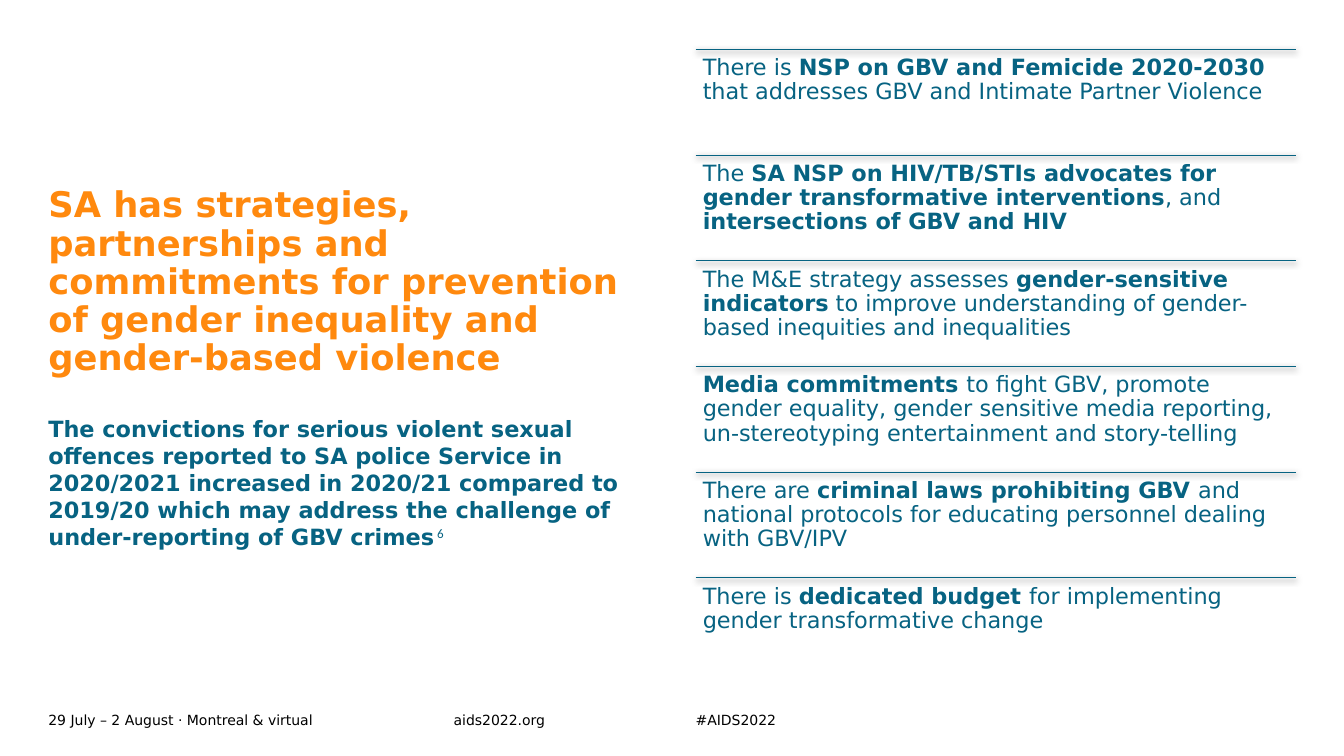
from dataclasses import dataclass

from lxml.etree import SubElement
from pptx import Presentation
from pptx.dml.color import RGBColor
from pptx.enum.shapes import MSO_CONNECTOR as Connector
from pptx.enum.text import MSO_ANCHOR as Anchor, MSO_AUTO_SIZE as AutoSize, PP_ALIGN as Align
from pptx.oxml.ns import qn
from pptx.util import Inches, Pt


@dataclass(frozen=True)
class Theme:
    font: str = "DejaVu Sans"
    note_font: str = "Calibri"
    teal: str = "076382"
    orange: str = "FF890E"
    black: str = "000000"
    title_size: float = 25.2
    body_size: float = 16
    footer_size: float = 10


THEME = Theme()

TITLE = ("SA has strategies, partnerships and commitments for prevention "
         "of gender inequality and gender-based violence")
CONVICTIONS = ("The convictions for serious violent sexual offences reported to SA police "
               "Service in 2020/2021 increased in 2020/21 compared to 2019/20 which may "
               "address the challenge of under-reporting of GBV crimes")
COMMITMENTS = [
    [("There is ", False), ("NSP on GBV and Femicide 2020-2030 ", True),
     ("that addresses GBV and Intimate Partner Violence", False)],
    [("The ", False),
     ("SA NSP on HIV/TB/STIs advocates for gender transformative interventions", True),
     (", and ", False), ("intersections of GBV and HIV", True)],
    [("The M&E strategy assesses ", False), ("gender-sensitive indicators", True),
     (" to improve understanding of gender-based inequities and inequalities", False)],
    [("Media commitments ", True),
     ("to fight GBV, promote gender equality, gender sensitive media reporting, "
      "un-stereotyping entertainment and story-telling", False)],
    [("There are ", False), ("criminal laws prohibiting GBV ", True),
     ("and national protocols for educating personnel dealing with GBV/IPV", False)],
    [("There is ", False), ("dedicated budget ", True),
     ("for implementing gender transformative change", False)],
]
FOOTER = [
    ("29 July – 2 August · Montreal & virtual", 0, 4.02),
    ("aids2022.org", 4.02, 1.93),
    ("#AIDS2022", 6.42, 1.93),
]


def write_text(box, spans, size=THEME.body_size, color=THEME.teal,
               anchor=Anchor.TOP, inset=0, line_spacing=1.0):
    frame = box.text_frame
    frame.word_wrap = True
    frame.auto_size = AutoSize.NONE
    frame.vertical_anchor = anchor
    frame.margin_left = frame.margin_right = Inches(inset)
    frame.margin_top = frame.margin_bottom = Inches(inset)
    para = frame.paragraphs[0]
    para.alignment = Align.LEFT
    para.line_spacing = line_spacing
    for text, bold in spans:
        span = para.add_run()
        span.text = text
        span.font.name = THEME.font
        span.font.size = Pt(size)
        span.font.bold = bold
        span.font.color.rgb = RGBColor.from_string(color)
    return para


def add_text(page, left, top, width, height, spans, **style):
    box = page.shapes.add_textbox(Inches(left), Inches(top), Inches(width), Inches(height))
    return write_text(box, spans, **style)


def add_rule(page, left, top, width):
    rule = page.shapes.add_connector(
        Connector.STRAIGHT, Inches(left), Inches(top), Inches(left + width), Inches(top))
    rule.line.color.rgb = RGBColor.from_string(THEME.teal)
    rule.line.width = Pt(0.5)
    effects = SubElement(rule._element.spPr, qn("a:effectLst"))
    shadow = SubElement(effects, qn("a:outerShdw"), blurRad=str(Pt(4.5)), dist=str(Pt(1.5)),
                        dir="5400000", algn="ctr", rotWithShape="0")
    shade = SubElement(shadow, qn("a:srgbClr"), val=THEME.black)
    SubElement(shade, qn("a:alpha"), val="63000")


def add_message(page, left, top, width):
    title = page.shapes.title
    title.left, title.top = Inches(left), Inches(top)
    title.width, title.height = Inches(width), Inches(1.93)
    write_text(title, [(TITLE, True)], size=THEME.title_size, color=THEME.orange,
               anchor=Anchor.BOTTOM, line_spacing=0.9)
    para = add_text(page, left, top + 2.3, width, 1.68, [(CONVICTIONS, True), (" 6", False)])
    reference = para.runs[-1]
    reference.font.name = THEME.note_font
    reference.font._element.set("baseline", "30000")


def add_commitments(page, left, top, width, height):
    row_height = height / len(COMMITMENTS)
    for index, spans in enumerate(COMMITMENTS):
        row_top = top + index * row_height
        add_rule(page, left, row_top, width)
        add_text(page, left, row_top, width, row_height, spans, inset=0.07, line_spacing=0.9)


def add_footer(page, left, top, height):
    for text, offset, width in FOOTER:
        add_text(page, left + offset, top, width, height, [(text, False)],
                 size=THEME.footer_size, color=THEME.black, anchor=Anchor.MIDDLE)


def main():
    deck = Presentation()
    deck.slide_width, deck.slide_height = Inches(13.33), Inches(7.5)
    page = deck.slides.add_slide(deck.slide_layouts.get_by_name("Title Only"))
    add_message(page, 0.48, 1.82, 5.95)
    add_commitments(page, 6.9, 0.49, 5.95, 6.29)
    add_footer(page, 0.48, 7.02, 0.24)
    deck.save("out.pptx")


if __name__ == "__main__":
    main()
